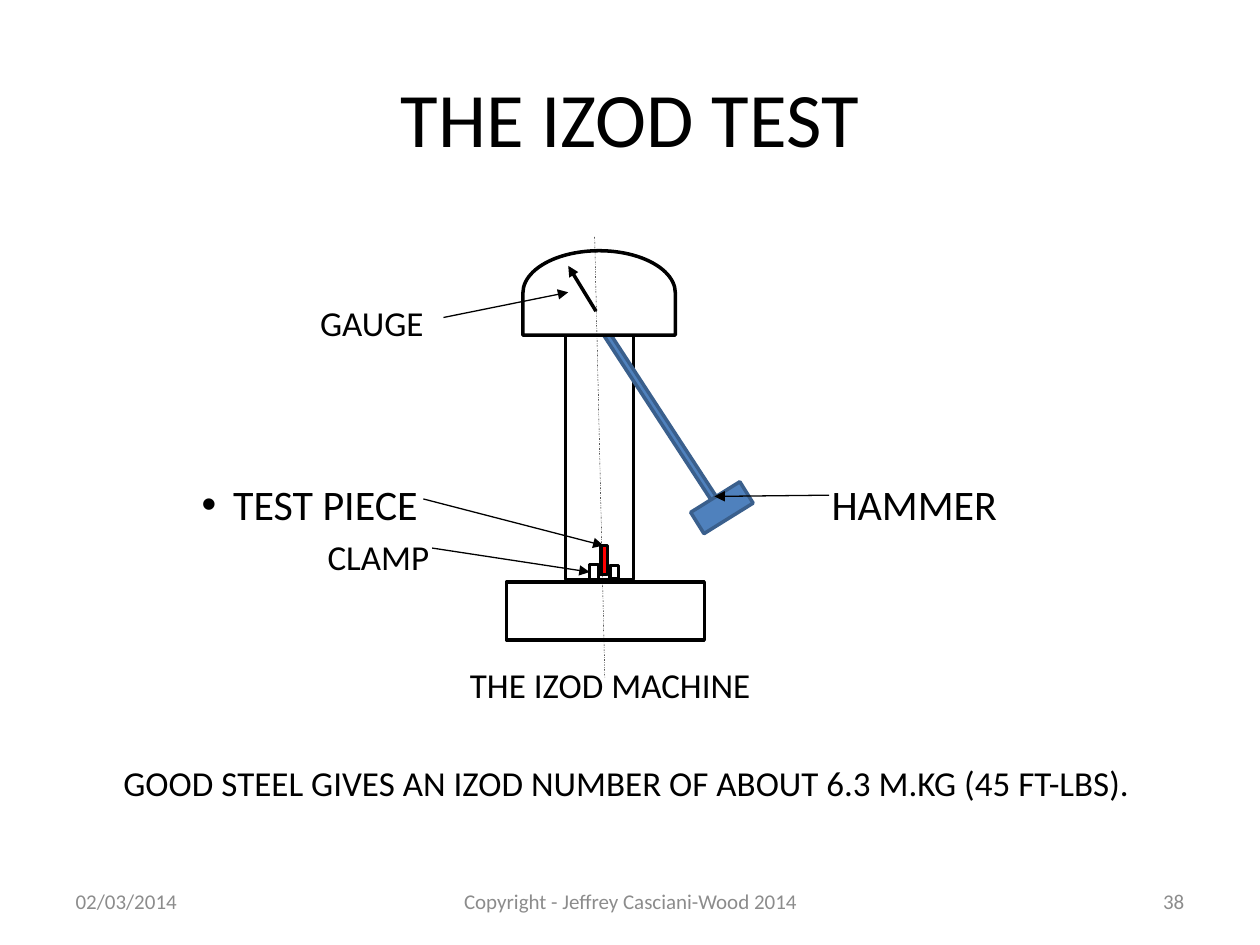
"""Build the Izod test slide: a labelled impact machine with title and footer."""
from typing import NamedTuple, Optional

from lxml import etree
from pptx import Presentation
from pptx import util as u
from pptx.dml.color import RGBColor
from pptx.enum import dml, shapes, text
from pptx.oxml.ns import qn

BLACK, WHITE, RED = "000000", "FFFFFF", "FF0000"
STEEL, STEEL_EDGE, GREY = "4F81BD", "3A5F8C", "8C8C8C"
RECT = shapes.MSO_SHAPE.RECTANGLE
LEFT, CENTER, RIGHT = text.PP_ALIGN.LEFT, text.PP_ALIGN.CENTER, text.PP_ALIGN.RIGHT


class Part(NamedTuple):
    left: float
    top: float
    width: float
    height: float
    fill: str = WHITE
    edge: str = BLACK
    rotation: float = 0
    preset: shapes.MSO_SHAPE = RECT


class Line(NamedTuple):
    x1: float
    y1: float
    x2: float
    y2: float
    weight: float = 0.75
    arrow: bool = True
    dash: Optional[dml.MSO_LINE] = None


class Label(NamedTuple):
    words: str
    left: float
    middle: float
    width: float
    size: int = 20
    bullet: bool = False


LABELS = [
    Label("GAUGE", 2.54, 2.56, 1),
    Label("TEST PIECE", 1.6, 4, 1.8, 24, True),
    Label("HAMMER", 6.6, 4, 1.6, 24),
    Label("CLAMP", 2.6, 4.42, 1),
    Label("THE IZOD MACHINE", 3.73, 5.43, 2.5),
    Label("GOOD STEEL GIVES AN IZOD NUMBER OF ABOUT 6.3 M.KG (45 FT-LBS).", 0.98, 6.21, 8.5),
]
BASE = Part(4.02, 4.62, 1.57, 0.46)
COLUMN = Part(4.49, 2.65, 0.54, 1.95)
HAMMER_ARM = Part(5.2, 2.34, 0.05, 1.88, STEEL, STEEL_EDGE, 326.9)
GAUGE_HEAD = Part(4.42, 1.72, 0.67, 1.21, rotation=270,
                  preset=shapes.MSO_SHAPE.FLOWCHART_DELAY)
HAMMER_HEAD = Part(5.5, 3.93, 0.46, 0.2, STEEL, STEEL_EDGE, 328.1)
LEFT_CLAMP = Part(4.68, 4.48, 0.07, 0.12)
TEST_PIECE = Part(4.77, 4.33, 0.05, 0.23, RED)
RIGHT_CLAMP = Part(4.84, 4.49, 0.07, 0.1)
MACHINE = [BASE, COLUMN, HAMMER_ARM, GAUGE_HEAD, HAMMER_HEAD,
           LEFT_CLAMP, TEST_PIECE, RIGHT_CLAMP]
LINES = [
    Line(4.73, 2.47, 4.51, 2.11, weight=2),
    Line(3.36, 3.96, 4.79, 4.33),
    Line(3.43, 4.35, 4.68, 4.54),
    Line(6.58, 3.93, 5.67, 3.94),
    Line(3.52, 2.52, 4.51, 2.32),
    Line(4.72, 1.88, 4.8, 5.38, 0.25, False, dml.MSO_LINE.DASH_DOT),
]


def color(value: str) -> RGBColor:
    return RGBColor.from_string(value)


def add_text(slide, words: str, left: float, top: float, width: float, height: float, *,
             size: int = 20, ink: str = BLACK, align=LEFT, bullet: bool = False) -> None:
    frame = slide.shapes.add_textbox(*map(u.Inches, (left, top, width, height))).text_frame
    frame.word_wrap = True
    frame.vertical_anchor = text.MSO_ANCHOR.MIDDLE
    frame.margin_left = frame.margin_right = frame.margin_top = frame.margin_bottom = 0
    paragraph = frame.paragraphs[0]
    paragraph.alignment = align
    run = paragraph.add_run()
    run.text = words
    run.font.name, run.font.size = "Calibri", u.Pt(size)
    run.font.color.rgb = color(ink)
    if bullet:
        properties = paragraph._p.get_or_add_pPr()
        properties.set("marL", str(u.Inches(0.25)))
        properties.set("indent", str(-u.Inches(0.25)))
        etree.SubElement(properties, qn("a:buFont"), typeface="Arial")
        etree.SubElement(properties, qn("a:buChar"), char="•")


def add_part(slide, part: Part) -> None:
    shape = slide.shapes.add_shape(part.preset, *map(u.Inches, part[:4]))
    shape.rotation = part.rotation
    shape.shadow.inherit = False
    shape.fill.solid()
    shape.fill.fore_color.rgb = color(part.fill)
    shape.line.color.rgb = color(part.edge)
    shape.line.width = u.Pt(2)


def add_line(slide, line: Line) -> None:
    connector = slide.shapes.add_connector(shapes.MSO_CONNECTOR.STRAIGHT,
                                           *map(u.Inches, line[:4]))
    connector.line.color.rgb = color(BLACK)
    connector.line.width = u.Pt(line.weight)
    if line.dash:
        connector.line.dash_style = line.dash
    if line.arrow:
        etree.SubElement(connector.line._get_or_add_ln(), qn("a:tailEnd"), type="triangle")
    etree.SubElement(connector._element.spPr, qn("a:effectLst"))


def main() -> None:
    deck = Presentation()
    deck.slide_width, deck.slide_height = u.Inches(10), u.Inches(7.5)
    slide = deck.slides.add_slide(deck.slide_layouts[6])
    add_text(slide, "THE IZOD TEST", 0.5, 0.3, 9, 1.25, size=44, align=CENTER)
    for label in LABELS:
        add_text(slide, label.words, label.left, label.middle - 0.2, label.width, 0.4,
                 size=label.size, bullet=label.bullet)
    for words, left, width, align in [
        ("02/03/2014", 0.6, 2.13, LEFT),
        ("Copyright - Jeffrey Casciani-Wood 2014", 3.42, 3.17, CENTER),
        ("38", 7.27, 2.13, RIGHT),
    ]:
        add_text(slide, words, left, 6.95, width, 0.4, size=12, ink=GREY, align=align)
    for part in MACHINE:
        add_part(slide, part)
    for line in LINES:
        add_line(slide, line)
    deck.save("out.pptx")


if __name__ == "__main__":
    main()
